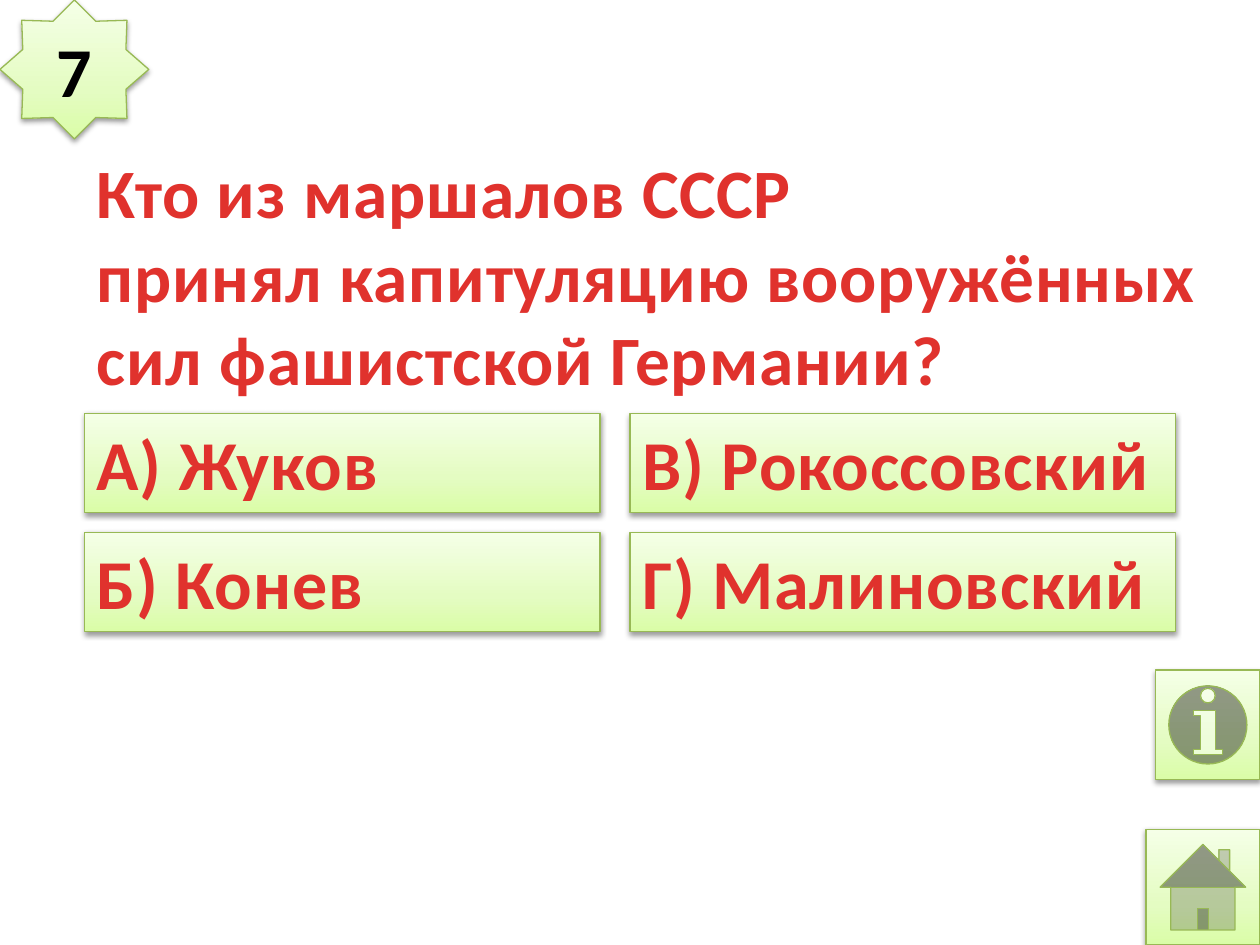
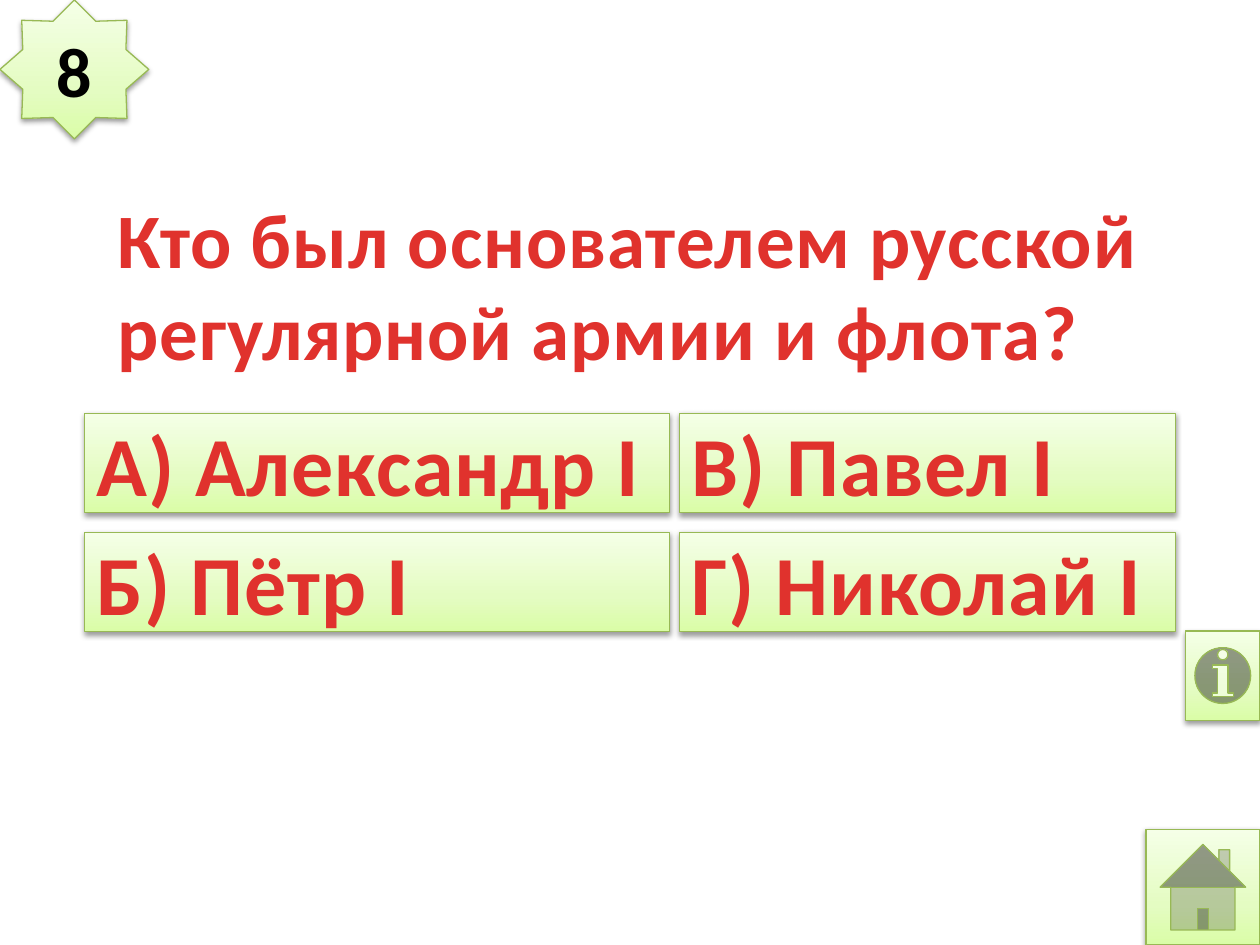
from copy import deepcopy
from lxml import etree
from pptx import Presentation
from pptx.dml.color import RGBColor
from pptx.enum.shapes import MSO_SHAPE
from pptx.enum.text import MSO_ANCHOR, PP_ALIGN
from pptx.util import Cm, Pt

RECT = MSO_SHAPE.RECTANGLE
STAR = MSO_SHAPE.STAR_8_POINT
HOME = MSO_SHAPE.ACTION_BUTTON_HOME
INFO = MSO_SHAPE.ACTION_BUTTON_INFORMATION
MIDDLE = MSO_ANCHOR.MIDDLE
LEFT, CENTER = PP_ALIGN.LEFT, PP_ALIGN.CENTER
color = RGBColor.from_string
RED, BLACK, EDGE = "E0322D", "000000", "98B955"
STOPS = [(0, "DAFDA7"), (0.35, "E4FCC2"), (1, "F5FFE7")]
SHADOW = (
    '<a:outerShdw xmlns:a="http://schemas.openxmlformats.org/drawingml/2006/main"'
    ' blurRad="40000" dist="20000" dir="5400000" rotWithShape="0">'
    '<a:srgbClr val="000000"><a:alpha val="38000"/></a:srgbClr></a:outerShdw>'
)


def green(slide, kind, *box):
    shape = slide.shapes.add_shape(kind, *map(Cm, box))
    shape.fill.gradient()
    shape.fill.gradient_angle = 90
    stops = shape._element.spPr.find(".//{*}gsLst")
    stops.append(deepcopy(stops[-1]))
    for stop, (place, tint) in zip(shape.fill.gradient_stops, STOPS):
        stop.position = place
        stop.color.rgb = color(tint)
    shape.line.color.rgb = color(EDGE)
    shape.line.width = Pt(0.75)
    shape.shadow.inherit = False
    shape._element.spPr.find("{*}effectLst").append(etree.fromstring(SHADOW))
    return shape


def write(shape, text, size, tint=RED, align=LEFT, space=50):
    frame = shape.text_frame
    frame.word_wrap = True
    frame.vertical_anchor = MIDDLE
    par = frame.paragraphs[0]
    par.text = text
    par.alignment = align
    font = par.font
    font.name, font.size, font.bold = "Calibri", Pt(size), True
    font.color.rgb = color(tint)
    for run in par.runs:
        run._r.get_or_add_rPr().set("spc", str(space))


deck = Presentation()
deck.slide_width, deck.slide_height = Cm(25.4), Cm(19.05)

quiz = [
    dict(
        mark="7",
        ask="Кто из маршалов СССР\vпринял капитуляцию вооружённых сил фашистской Германии?",
        place=(1.7, 3.94, 23.28, 3.18), ask_size=39.6,
        picks=["А) Жуков", "Б) Конев", "В) Рокоссовский", "Г) Малиновский"],
        size=40, cols=[(1.7, 10.4), (12.7, 11)],
        info=(23.3, 13.51, 2.1, 2.21),
    ),
    dict(
        mark="8",
        ask="Кто был основателем русской регулярной армии и флота?",
        place=(2.12, 4.13, 22.01, 3.18), ask_size=44,
        picks=["А) Александр I", "Б) Пётр I", "В) Павел I", "Г) Николай I"],
        size=48, cols=[(1.7, 11.8), (13.7, 10)],
        info=(23.9, 12.72, 1.5, 1.8),
    ),
]

for item in quiz:
    slide = deck.slides.add_slide(deck.slide_layouts[6])
    for i, pick in enumerate(item["picks"]):
        left, width = item["cols"][i // 2]
        top = 8.33 + i % 2 * 2.4
        write(green(slide, RECT, left, top, width, 2), pick, item["size"])
    green(slide, HOME, 23.1, 16.72, 2.3, 2.33)
    star = green(slide, STAR, 0, 0, 3, 2.8)
    write(star, item["mark"], 40, BLACK, CENTER, 0)
    title = slide.shapes.add_textbox(*map(Cm, item["place"]))
    write(title, item["ask"], item["ask_size"])
    green(slide, INFO, *item["info"])

deck.save("out.pptx")
